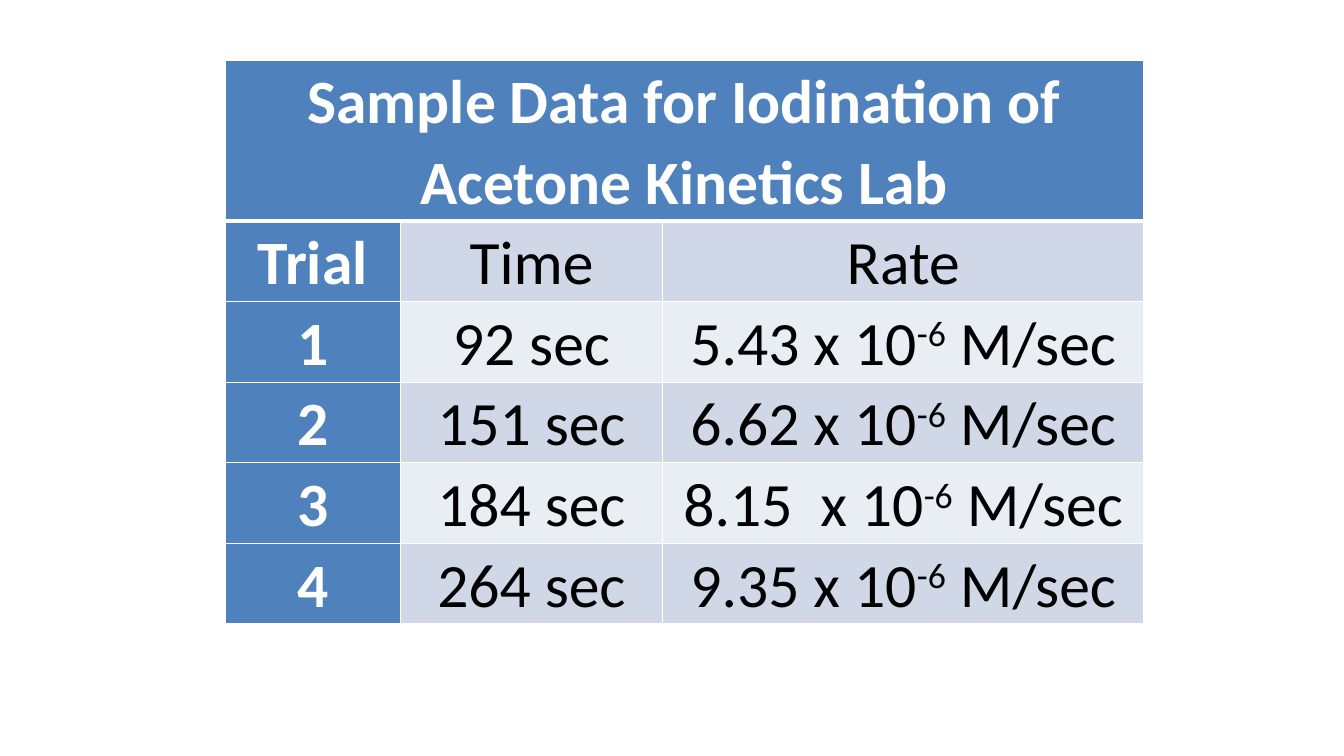
from dataclasses import dataclass

from lxml import etree
from pptx import Presentation
from pptx.dml.color import RGBColor
from pptx.enum.text import PP_ALIGN
from pptx.oxml.ns import qn
from pptx.util import Pt

CENTER = PP_ALIGN.CENTER
BLANK_LAYOUT = 6


@dataclass(frozen=True)
class Theme:
    font: str = "Calibri"
    size: float = 44
    line_spacing: float = 1.07
    header: str = "4F81BD"
    bands: tuple = ("D0D8E8", "E9EDF4")
    light: str = "FFFFFF"
    dark: str = "000000"
    border: float = 1
    heavy_border: float = 3


THEME = Theme()
TITLE = "Sample Data for Iodination of Acetone Kinetics Lab"
HEADINGS = ("Trial", "Time", "Rate")
TRIALS = (
    ("1", "92 sec", "5.43 x 10"),
    ("2", "151 sec", "6.62 x 10"),
    ("3", "184 sec", "8.15  x 10"),
    ("4", "264 sec", "9.35 x 10"),
)
EXPONENT = "-6"
UNIT = " M/sec"
LEFT, TOP = 160.8, 42.8
COLUMN_WIDTHS = (125.2, 187.4, 343.6)
TITLE_HEIGHT, ROW_HEIGHT = 112, 56.6
SIDE_MARGIN = 5


def add_run(p, text, color, bold, superscript=False):
    r = p.add_run()
    r.text = text
    r.font.name = THEME.font
    r.font.size = Pt(THEME.size)
    r.font.bold = bold
    r.font.color.rgb = RGBColor.from_string(color)
    if superscript:
        r.font._element.set("baseline", "30000")


def set_borders(cell, bottom):
    tc_pr = cell._tc.get_or_add_tcPr()
    for side in ("L", "R", "T", "B"):
        width = bottom if side == "B" else THEME.border
        line = etree.SubElement(tc_pr, qn(f"a:ln{side}"), w=str(Pt(width)))
        fill = etree.SubElement(line, qn("a:solidFill"))
        etree.SubElement(fill, qn("a:srgbClr"), val=THEME.light)


def style_cell(cell, fill, bottom=THEME.border):
    set_borders(cell, bottom)
    cell.fill.solid()
    cell.fill.fore_color.rgb = RGBColor.from_string(fill)
    cell.margin_left = cell.margin_right = Pt(SIDE_MARGIN)
    cell.margin_top = cell.margin_bottom = Pt(0)


def fill_cell(cell, texts, is_header):
    p = cell.text_frame.paragraphs[0]
    p.alignment = CENTER
    p.line_spacing = THEME.line_spacing
    color = THEME.light if is_header else THEME.dark
    for text in texts:
        add_run(p, text, color, is_header, text == EXPONENT)


def add_kinetics_table(slide):
    rows = [[(text,) for text in HEADINGS]]
    rows += [[(trial,), (time,), (rate, EXPONENT, UNIT)] for trial, time, rate in TRIALS]
    height = TITLE_HEIGHT + ROW_HEIGHT * len(rows)
    frame = slide.shapes.add_table(
        len(rows) + 1, len(HEADINGS), Pt(LEFT), Pt(TOP), Pt(sum(COLUMN_WIDTHS)), Pt(height)
    )
    table = frame.table
    table.first_col = True
    for column, width in zip(table.columns, COLUMN_WIDTHS):
        column.width = Pt(width)
    for i, row in enumerate(table.rows):
        row.height = Pt(ROW_HEIGHT if i else TITLE_HEIGHT)

    for cell in table.rows[0].cells:
        style_cell(cell, THEME.header, THEME.heavy_border)
    title = table.cell(0, 0)
    title.merge(table.cell(0, len(HEADINGS) - 1))
    fill_cell(title, (TITLE,), True)

    for i, row in enumerate(rows):
        for j, texts in enumerate(row):
            cell = table.cell(i + 1, j)
            style_cell(cell, THEME.bands[i % 2] if j else THEME.header)
            fill_cell(cell, texts, j == 0)


def main():
    prs = Presentation()
    prs.slide_width, prs.slide_height = Pt(960), Pt(540)
    slide = prs.slides.add_slide(prs.slide_layouts[BLANK_LAYOUT])
    add_kinetics_table(slide)
    prs.save("out.pptx")


if __name__ == "__main__":
    main()
